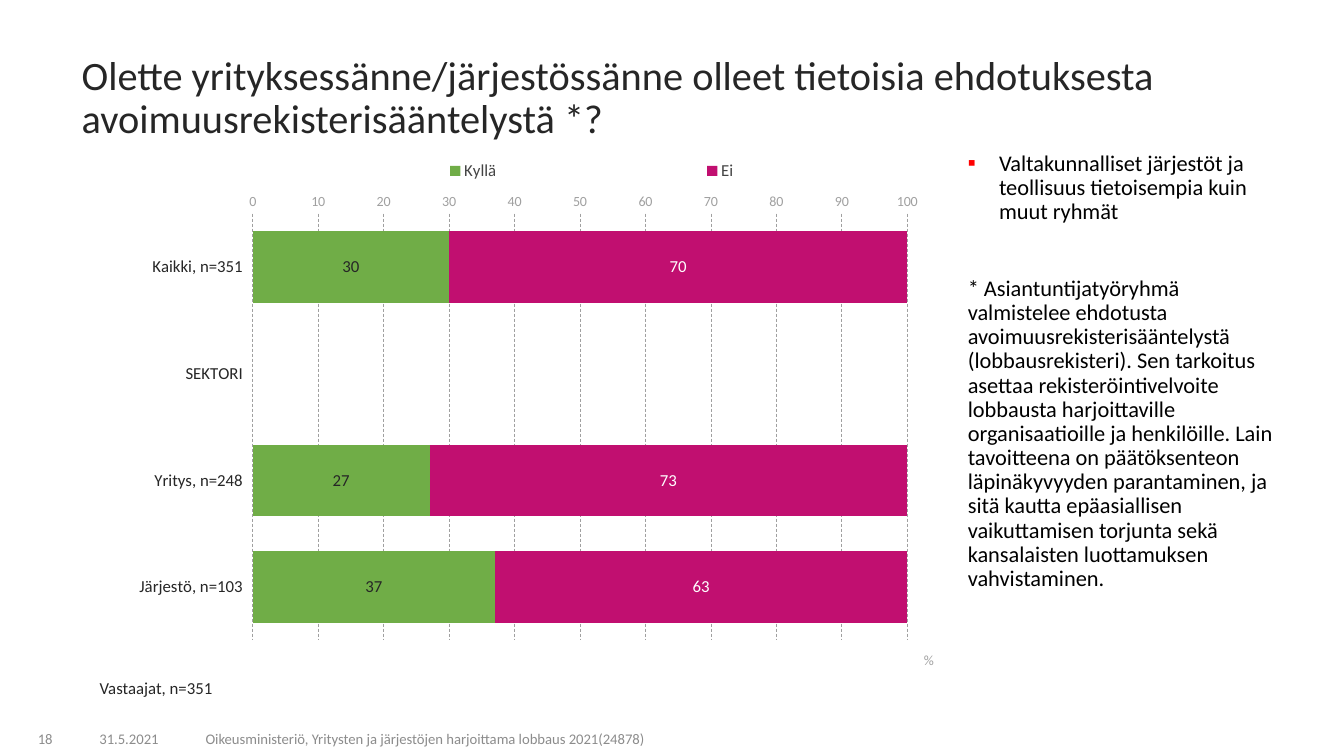
import pptx
import pptx.chart.data
import pptx.dml.color
import pptx.enum.chart
import pptx.enum.dml
import pptx.enum.text
import pptx.oxml
import pptx.oxml.ns
import pptx.util
from pptx.util import Inches

Pt = pptx.util.Pt
Align = pptx.enum.text.PP_ALIGN
Anchor = pptx.enum.text.MSO_ANCHOR
qn = pptx.oxml.ns.qn

# Content
TITLE = ("Olette yrityksessänne/järjestössänne olleet tietoisia ehdotuksesta "
         "avoimuusrekisterisääntelystä *?")
FINDING = "Valtakunnalliset järjestöt ja teollisuus tietoisempia kuin muut ryhmät"
FOOTNOTE = (
    "* Asiantuntijatyöryhmä valmistelee ehdotusta avoimuusrekisterisääntelystä "
    "(lobbausrekisteri). Sen tarkoitus asettaa rekisteröintivelvoite lobbausta "
    "harjoittaville organisaatioille ja henkilöille. Lain tavoitteena on "
    "päätöksenteon läpinäkyvyyden parantaminen, ja sitä kautta epäasiallisen "
    "vaikuttamisen torjunta sekä kansalaisten luottamuksen vahvistaminen.")
RESPONDENTS = "Vastaajat, n=351"
GROUPS = ["Kaikki, n=351", "SEKTORI", "Yritys, n=248", "Järjestö, n=103"]
ANSWERS = [  # name, values, bar colour, label colour
    ("Kyllä", [30, None, 27, 37], "70AD47", "262626"),
    ("Ei", [70, None, 73, 63], "C10F70", "FFFFFF"),
]
FOOTERS = [  # text, left, width, alignment
    ("18", 0.03, 0.59, Align.RIGHT),
    ("31.5.2021", 0.66, 1.24, Align.CENTER),
    ("Oikeusministeriö, Yritysten ja järjestöjen harjoittama lobbaus 2021(24878)",
     1.94, 5.92, Align.LEFT),
]
FONT, DARK, GREY = "Calibri", "262626", "A0A0A0"


def rgb(value):
    return pptx.dml.color.RGBColor.from_string(value)


def set_font(font, size, color):
    font.name = FONT
    font.size = Pt(size)
    font.color.rgb = rgb(color)


def add_box(left, top, width, height, texts, size, color, spacing=None):
    box = page.shapes.add_textbox(
        Inches(left), Inches(top), Inches(width), Inches(height))
    frame = box.text_frame
    frame.word_wrap = True
    for index, text in enumerate(texts):
        para = frame.paragraphs[0] if index == 0 else frame.add_paragraph()
        para.text = text
        para.line_spacing = spacing
        set_font(para.font, size, color)
    return frame


def place(element, index, x, y, width=None, height=None, inner=False):
    """Give a chart part a manual layout, in fractions of the chart."""
    for old in element.findall(qn("c:layout")):
        element.remove(old)
    settings = [("layoutTarget", "inner")] if inner else []
    settings += [("xMode", "edge"), ("yMode", "edge"), ("x", x), ("y", y)]
    if width:
        settings += [("w", width), ("h", height)]
    parts = "".join(f'<c:{name} val="{value}"/>' for name, value in settings)
    element.insert(index, pptx.oxml.parse_xml(
        f'<c:layout {pptx.oxml.ns.nsdecls("c")}><c:manualLayout>{parts}'
        '</c:manualLayout></c:layout>'))


deck = pptx.Presentation()
deck.slide_width, deck.slide_height = Inches(13.33), Inches(7.5)
page = deck.slides.add_slide(deck.slide_layouts[5])

# Title
title = page.shapes.title
title.left, title.top = Inches(0.71), Inches(0.64)
title.width, title.height = Inches(12.07), Inches(0.68)
title.text_frame.text = TITLE
title.text_frame.auto_size = pptx.enum.text.MSO_AUTO_SIZE.NONE
title.text_frame.vertical_anchor = Anchor.MIDDLE
heading = title.text_frame.paragraphs[0]
heading.alignment = Align.LEFT
heading.line_spacing = 0.9
set_font(heading.font, 28.8, DARK)

# Stacked bar chart
data = pptx.chart.data.CategoryChartData()
data.categories = GROUPS
for name, values, *_ in ANSWERS:
    data.add_series(name, values)
chart = page.shapes.add_chart(
    pptx.enum.chart.XL_CHART_TYPE.BAR_STACKED, Inches(0.71), Inches(1.46),
    Inches(8.6), Inches(5.24), data).chart
set_font(chart.font, 12, "000000")
chart.has_title = False
plot = chart.plots[0]
plot.gap_width, plot.overlap = 50, 100
plot.vary_by_categories = False
for series, (_, _, bar_color, label_color) in zip(plot.series, ANSWERS):
    series.format.fill.solid()
    series.format.fill.fore_color.rgb = rgb(bar_color)
    series.invert_if_negative = False
    labels = series.data_labels
    labels.show_value = True
    labels.number_format = "#,##0"
    labels.number_format_is_linked = False
    set_font(labels.font, 12, label_color)
place(chart._chartSpace.chart.plotArea, 0, 0.209, 0.126, 0.755, 0.808, inner=True)

# Legend
chart.has_legend = True
legend = chart.legend
legend.position = pptx.enum.chart.XL_LEGEND_POSITION.TOP
legend.include_in_layout = False
set_font(legend.font, 12, "444444")
place(legend._element, 1, 0.2, 0, 0.8, 0.09)

# Axes
groups, percent = chart.category_axis, chart.value_axis
for axis, size, color in ((groups, 12, DARK), (percent, 10, GREY)):
    axis.major_tick_mark = pptx.enum.chart.XL_TICK_MARK.NONE
    axis.minor_tick_mark = pptx.enum.chart.XL_TICK_MARK.NONE
    axis.format.line.fill.background()
    axis.tick_labels.number_format = "General"
    axis.tick_labels.number_format_is_linked = False
    set_font(axis.tick_labels.font, size, color)
groups.reverse_order = True
groups.crosses = pptx.enum.chart.XL_AXIS_CROSSES.MAXIMUM
groups.tick_label_position = pptx.enum.chart.XL_TICK_LABEL_POSITION.LOW
percent.minimum_scale, percent.maximum_scale = 0, 100.01
percent.major_unit = 10
percent.has_major_gridlines = True
grid = percent.major_gridlines.format.line
grid.color.rgb = rgb(GREY)
grid.width = Pt(0.5)
grid.dash_style = pptx.enum.dml.MSO_LINE.DASH
unit = percent.axis_title
unit.text_frame.text = "%"
set_font(unit.text_frame.paragraphs[0].font, 10, GREY)
unit.text_frame.paragraphs[0].font.bold = False
place(unit._element, 1, 0.98, 0.95)

# Finding and footnote beside the chart
notes = add_box(9.5, 1.46, 3.28, 5.57, [FINDING, FOOTNOTE], 16, "000000", 0.9)
finding, footnote = notes.paragraphs
footnote.space_before = Pt(37.5)
bullet = finding._p.get_or_add_pPr()
bullet.set("marL", str(Inches(0.31)))
bullet.set("indent", str(-Inches(0.31)))
namespace = pptx.oxml.ns.nsdecls("a")
marks = [
    f'<a:buClr {namespace}><a:srgbClr val="FF0000"/></a:buClr>',
    f'<a:buFont {namespace} typeface="{FONT}"/>',
    f'<a:buChar {namespace} char="▪"/>',
]
defaults = bullet.find(qn("a:defRPr"))
for mark in marks:
    defaults.addprevious(pptx.oxml.parse_xml(mark))

# Respondent count and footers
add_box(0.89, 6.7, 9.18, 0.28, [RESPONDENTS], 12, DARK, 0.9)
for text, left, width, alignment in FOOTERS:
    footer = add_box(left, 7.16, width, 0.3, [text], 10.5, "8C8C8C")
    footer.vertical_anchor = Anchor.BOTTOM
    footer.paragraphs[0].alignment = alignment

deck.save("out.pptx")
